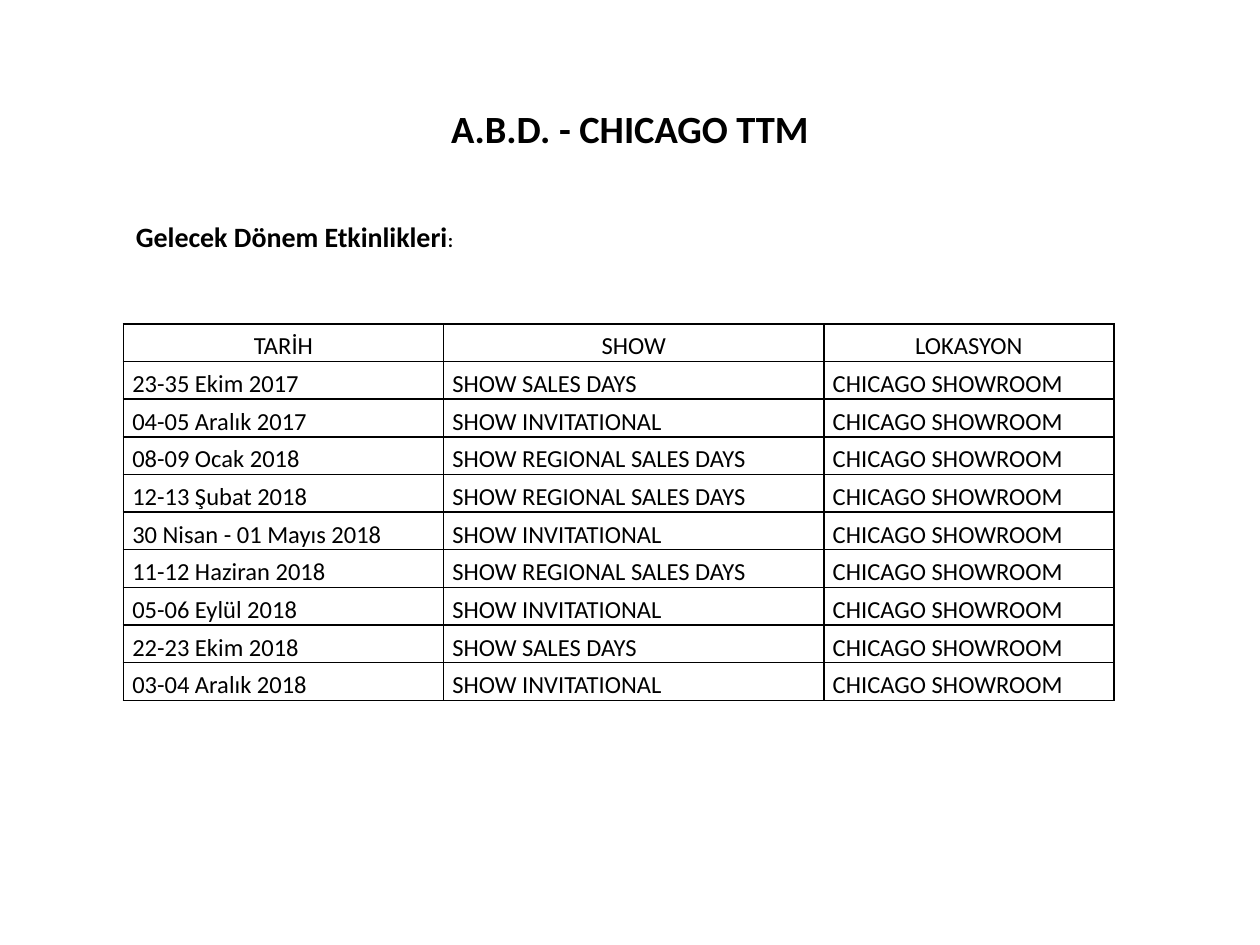
from dataclasses import dataclass

from lxml import etree
from pptx import Presentation
from pptx import util as u
from pptx.dml.color import RGBColor
from pptx.enum import text
from pptx.oxml import ns


@dataclass(frozen=True)
class Theme:
    font: str = "Calibri"
    ink: RGBColor = RGBColor(0, 0, 0)
    title: int = 22
    heading: int = 16
    colon: int = 11
    body: int = 14
    border: int = 1


THEME = Theme()
HEADER = ("TARİH", "SHOW", "LOKASYON")
LOCATION = "CHICAGO SHOWROOM"
MARKET = "SHOW SALES DAYS"
MIDWEST = "SHOW REGIONAL SALES DAYS"
INVITATIONAL = "SHOW INVITATIONAL"
EVENTS = (
    ("23-35 Ekim 2017", MARKET),
    ("04-05 Aralık 2017", INVITATIONAL),
    ("08-09 Ocak 2018", MIDWEST),
    ("12-13 Şubat 2018", MIDWEST),
    ("30 Nisan - 01 Mayıs 2018", INVITATIONAL),
    ("11-12 Haziran 2018", MIDWEST),
    ("05-06 Eylül 2018", INVITATIONAL),
    ("22-23 Ekim 2018", MARKET),
    ("03-04 Aralık 2018", INVITATIONAL),
)
COLUMNS = (2.54, 3.02, 2.3)


def inches(box):
    return [u.Inches(v) for v in box]


def style(font, size, bold=False):
    font.name = THEME.font
    font.size = u.Pt(size)
    font.bold = bold
    font.color.rgb = THEME.ink


def add_title(s, box):
    sp = s.shapes.title
    sp.left, sp.top, sp.width, sp.height = inches(box)
    tf = sp.text_frame
    tf.text = "A.B.D. - CHICAGO TTM"
    tf.word_wrap = True
    tf.auto_size = text.MSO_AUTO_SIZE.NONE
    tf.vertical_anchor = text.MSO_ANCHOR.MIDDLE
    p = tf.paragraphs[0]
    p.alignment = text.PP_ALIGN.CENTER
    p.line_spacing = 1.0
    p.space_before = u.Pt(0)
    style(p.font, THEME.title, True)


def add_heading(s, box):
    tf = s.shapes.add_textbox(*inches(box)).text_frame
    tf.word_wrap = False
    tf.vertical_anchor = text.MSO_ANCHOR.TOP
    p = tf.paragraphs[0]
    for words, size in (("Gelecek Dönem Etkinlikleri", THEME.heading),
                        (":", THEME.colon)):
        r = p.add_run()
        r.text = words
        style(r.font, size, True)


def set_borders(cell):
    props = cell._tc.get_or_add_tcPr()
    for i, side in enumerate(("lnL", "lnR", "lnT", "lnB")):
        ln = etree.Element(ns.qn(f"a:{side}"), w=str(u.Pt(THEME.border)))
        fill = etree.SubElement(ln, ns.qn("a:solidFill"))
        etree.SubElement(fill, ns.qn("a:srgbClr"), val=str(THEME.ink))
        props.insert(i, ln)


def fill_cell(cell, words, align):
    cell.fill.background()
    cell.vertical_anchor = text.MSO_ANCHOR.BOTTOM
    cell.margin_left = cell.margin_right = u.Inches(0.07)
    cell.margin_top = cell.margin_bottom = 0
    cell.text = words
    p = cell.text_frame.paragraphs[0]
    p.alignment = align
    p.line_spacing = 1.07
    style(p.font, THEME.body)
    set_borders(cell)


def add_events(s, box):
    rows = [HEADER] + [(date, show, LOCATION) for date, show in EVENTS]
    table = s.shapes.add_table(len(rows), len(COLUMNS), *inches(box)).table
    table.first_row = table.horz_banding = False
    for column, width in zip(table.columns, COLUMNS):
        column.width = u.Inches(width)
    for i, row in enumerate(rows):
        align = text.PP_ALIGN.LEFT if i else text.PP_ALIGN.CENTER
        for j, words in enumerate(row):
            fill_cell(table.cell(i, j), words, align)


def main():
    prs = Presentation()
    prs.slide_width, prs.slide_height = inches((10, 7.5))
    s = prs.slides.add_slide(prs.slide_layouts[5])
    add_title(s, (1.16, 0.78, 7.68, 0.47))
    add_events(s, (0.98, 2.57, sum(COLUMNS), 2.99))
    add_heading(s, (0.98, 1.69, 2.78, 0.67))
    prs.save("out.pptx")


if __name__ == "__main__":
    main()
